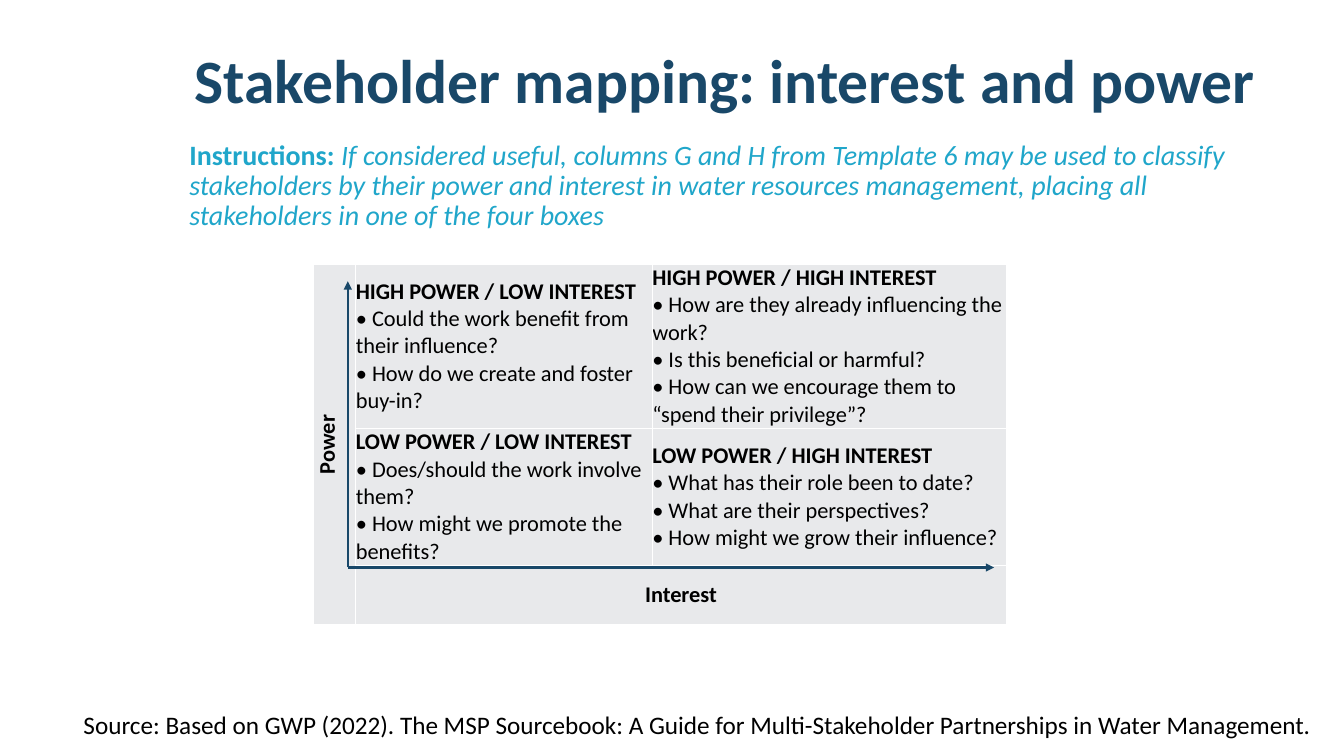
from dataclasses import dataclass

from lxml.etree import SubElement
from pptx import Presentation
from pptx.dml.color import RGBColor as RGB
from pptx.enum.shapes import MSO_CONNECTOR as CONN
from pptx.enum.text import MSO_ANCHOR as ANCHOR, PP_ALIGN as ALIGN
from pptx.oxml.ns import qn
from pptx.util import Inches, Pt


@dataclass(frozen=True)
class Theme:
    font: str = "Calibri"
    navy: RGB = RGB(0x19, 0x48, 0x69)
    cyan: RGB = RGB(0x20, 0xA6, 0xCA)
    black: RGB = RGB(0, 0, 0)
    cell: RGB = RGB(0xE8, 0xE9, 0xEB)
    border: str = "FFFFFF"
    title: int = 44
    body: int = 20
    source: int = 18
    table: int = 16
    axis: float = 1.75


T = Theme()
COLS = (0.42, 2.94, 3.51)
ROWS = (1.63, 1.36, 0.58)
QUADRANTS = (
    (("HIGH POWER / LOW INTEREST",
      "• Could the work benefit from their influence?",
      "• How do we create and foster buy-in?"),
     ("HIGH POWER / HIGH INTEREST",
      "• How are they already influencing the work?",
      "• Is this beneficial or harmful?",
      "• How can we encourage them to “spend their privilege”?")),
    (("LOW POWER / LOW INTEREST",
      "• Does/should the work involve them?",
      "• How might we promote the benefits?"),
     ("LOW POWER / HIGH INTEREST",
      "• What has their role been to date?",
      "• What are their perspectives?",
      "• How might we grow their influence?")),
)


def add_run(p, text, size, color, **formats):
    r = p.add_run()
    r.text = text
    r.font.color.rgb = color
    values = {"name": T.font, "size": Pt(size), "bold": False, **formats}
    for name, value in values.items():
        setattr(r.font, name, value)


def add_title(s, box):
    sp = s.shapes.title
    for name, value in zip(("left", "top", "width", "height"), box):
        setattr(sp, name, Inches(value))
    tf = sp.text_frame
    tf.word_wrap, tf.vertical_anchor = True, ANCHOR.MIDDLE
    p = tf.paragraphs[0]
    p.alignment, p.line_spacing = ALIGN.LEFT, 0.9
    add_run(p, "Stakeholder mapping: interest and power", T.title, T.navy, bold=True)


def add_text(s, box, spacing, runs):
    """Place one paragraph built from (text, size, colour, formats) runs."""
    tf = s.shapes.add_textbox(*map(Inches, box)).text_frame
    tf.word_wrap = True
    p = tf.paragraphs[0]
    p.line_spacing = spacing
    for text, size, color, formats in runs:
        add_run(p, text, size, color, **formats)


def style_cell(cell):
    for side in ("left", "right", "top", "bottom"):
        setattr(cell, f"margin_{side}", 0)
    cell.vertical_anchor = ANCHOR.MIDDLE
    tc_pr = cell._tc.get_or_add_tcPr()
    for tag in ("a:lnL", "a:lnR", "a:lnT", "a:lnB"):
        ln = SubElement(tc_pr, qn(tag), w=str(Pt(1)))
        fill = SubElement(ln, qn("a:solidFill"))
        SubElement(fill, qn("a:srgbClr"), val=T.border)
    cell.fill.solid()
    cell.fill.fore_color.rgb = T.cell


def fill_cell(cell, lines, align=ALIGN.LEFT):
    """Write a bold heading, then its questions on new lines."""
    p = cell.text_frame.paragraphs[0]
    p.alignment = align
    for i, line in enumerate(lines):
        if i:
            p.add_line_break()
        add_run(p, line, T.table, T.black, bold=i == 0)
    # Line breaks take the size of the text around them
    for br in p._p.findall(qn("a:br")):
        SubElement(br, qn("a:rPr"), sz=str(T.table * 100))


def add_axis(s, start, end):
    line = s.shapes.add_connector(CONN.STRAIGHT, *map(Inches, start + end))
    line.line.color.rgb = T.navy
    line.line.width = Pt(T.axis)
    SubElement(line.line._get_or_add_ln(), qn("a:tailEnd"), type="triangle")
    SubElement(line._element.spPr, qn("a:effectLst"))


def add_matrix(s, left, top):
    width, height = sum(COLS), sum(ROWS)
    frame = s.shapes.add_table(len(ROWS), len(COLS),
                               *map(Inches, (left, top, width, height)))
    table = frame.table
    table.first_row = table.horz_banding = False
    for col, size in zip(table.columns, COLS):
        col.width = Inches(size)
    for row, size in zip(table.rows, ROWS):
        row.height = Inches(size)
    for cell in table.iter_cells():
        style_cell(cell)

    # Axis labels in the merged first column and last row
    power, interest = table.cell(0, 0), table.cell(2, 1)
    power.merge(table.cell(2, 0))
    interest.merge(table.cell(2, 2))
    power._tc.get_or_add_tcPr().set("vert", "vert270")
    fill_cell(power, ("Power",), ALIGN.CENTER)
    fill_cell(interest, ("Interest",), ALIGN.CENTER)

    # Four quadrants
    for i, row in enumerate(QUADRANTS):
        for j, lines in enumerate(row, 1):
            fill_cell(table.cell(i, j), lines)

    # Arrows from the shared corner
    x, y = left + 0.34, top + ROWS[0] + ROWS[1] + 0.02
    add_axis(s, (x, y), (x, top + 0.17))
    add_axis(s, (x, y), (left + width - 0.12, y))


def main():
    prs = Presentation()
    prs.slide_width, prs.slide_height = Inches(13.33), Inches(7.5)
    s = prs.slides.add_slide(prs.slide_layouts[5])
    add_title(s, (1.83, 0.1, 11.5, 1.45))
    # Instructions
    add_text(s, (1.78, 1.35, 11, 1.1), 0.9, (
        ("Instructions:", T.body, T.cyan, {"bold": True}),
        (" If considered useful, columns G and H from Template 6 may be used to "
         "classify stakeholders by their power and interest in water resources "
         "management, placing all stakeholders in one of the four boxes",
         T.body, T.cyan, {"italic": True}),
    ))
    add_matrix(s, 3.11, 2.62)
    # Source line
    add_text(s, (0.73, 6.99, 12.53, 0.4), 1.0, (
        ("Source: Based on GWP (2022). The MSP Sourcebook: A Guide for "
         "Multi-Stakeholder Partnerships in Water Management.",
         T.source, T.black, {}),
    ))
    prs.save("out.pptx")


if __name__ == "__main__":
    main()
